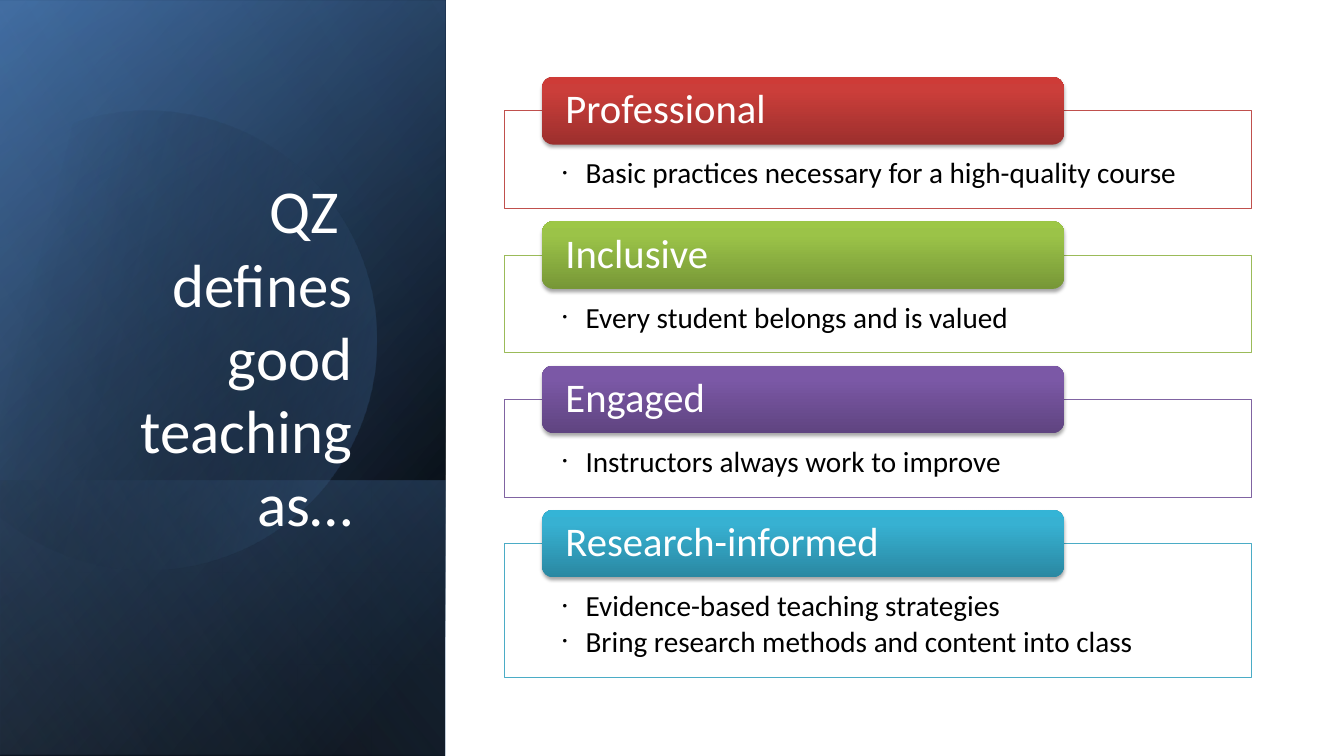
from dataclasses import dataclass
from math import cos, radians, sin

from pptx import Presentation, oxml, util as u
from pptx.dml.color import RGBColor
from pptx.enum import shapes as es, text as et
from pptx.oxml import ns

FONT = "Calibri"
BLACK = RGBColor(0x00, 0x00, 0x00)
WHITE = RGBColor(0xFF, 0xFF, 0xFF)
NAVY = RGBColor(0x37, 0x60, 0x92)
BLUE = RGBColor(0x4F, 0x81, 0xBD)
PALE = RGBColor(0x95, 0xB3, 0xD7)
RED = RGBColor(0xC0, 0x50, 0x4D)
GREEN = RGBColor(0x9B, 0xBB, 0x59)
PURPLE = RGBColor(0x80, 0x64, 0xA2)
TEAL = RGBColor(0x4B, 0xAC, 0xC6)
RED_FADE = (RGBColor(0x9C, 0x2F, 0x2D), RGBColor(0xCB, 0x3E, 0x3A), RGBColor(0xCE, 0x3B, 0x37))
GREEN_FADE = (RGBColor(0x77, 0x97, 0x37), RGBColor(0x9B, 0xC3, 0x48), RGBColor(0x9D, 0xC7, 0x46))
PURPLE_FADE = (RGBColor(0x5F, 0x44, 0x80), RGBColor(0x7B, 0x58, 0xA6), RGBColor(0x7C, 0x57, 0xA8))
TEAL_FADE = (RGBColor(0x2A, 0x88, 0xA2), RGBColor(0x37, 0xB1, 0xD2), RGBColor(0x34, 0xB4, 0xD6))
PITCH_GAP = 1.29


@dataclass
class Stop:
    pos: int
    color: RGBColor
    alpha: int = 100


@dataclass
class Panel:
    left: float
    top: float
    width: float
    angle: int
    stops: list[Stop]


@dataclass
class Card:
    head: str
    points: list[str]
    line: RGBColor
    fade: tuple[RGBColor, RGBColor, RGBColor]
    height: float = 2.72


PANELS = [
    Panel(-4.32, 4.32, 21.01, 50, [Stop(8, BLACK), Stop(100, NAVY)]),
    Panel(-4.32, 4.34, 21.01, 30, [Stop(0, BLACK, 0), Stop(99, BLUE, 46)]),
    Panel(2.36, 11, 7.67, 130, [Stop(2, BLUE, 29), Stop(100, BLACK, 30)]),
]
SHEEN = Panel(-4.32, 4.29, 21.01, 120, [Stop(0, BLACK, 0), Stop(99, PALE, 11)])
CARDS = [
    Card("Professional", ["Basic practices necessary for a high-quality course"], RED, RED_FADE),
    Card("Inclusive", ["Every student belongs and is valued"], GREEN, GREEN_FADE),
    Card("Engaged", ["Instructors always work to improve"], PURPLE, PURPLE_FADE),
    Card("Research-informed",
         ["Evidence-based teaching strategies", "Bring research methods and content into class"],
         TEAL, TEAL_FADE, 3.73),
]


def make(tag: str, inner: str = "", **attrs):
    pairs = "".join(f' {key}="{val}"' for key, val in attrs.items())
    return oxml.parse_xml(f'<a:{tag} {ns.nsdecls("a")}{pairs}>{inner}</a:{tag}>')


def tint(color: RGBColor, alpha: int) -> str:
    return f'<a:srgbClr val="{color}"><a:alpha val="{alpha * 1000}"/></a:srgbClr>'


def fade(shape, stops: list[Stop], angle: int) -> None:
    shape.shadow.inherit = False
    shape.line.fill.background()
    shape.fill.background()
    marks = "".join(f'<a:gs pos="{s.pos * 1000}">{tint(s.color, s.alpha)}</a:gs>' for s in stops)
    inner = f'<a:gsLst>{marks}</a:gsLst><a:lin ang="{angle * 60000}" scaled="0"/>'
    props = shape.element.spPr
    props.replace(props.find(ns.qn("a:noFill")), make("gradFill", inner, rotWithShape=1))


def add_box(slide, kind, left: float, top: float, width: float, height: float):
    return slide.shapes.add_shape(kind, u.Cm(left), u.Cm(top), u.Cm(width), u.Cm(height))


def write(shape, lines: list[str], *, size: int, color: RGBColor, insets: tuple,
          align=et.PP_ALIGN.LEFT, anchor=et.MSO_ANCHOR.TOP, spacing: float = 1.0,
          after: float = 0, bullet: bool = False) -> None:
    frame = shape.text_frame
    frame.word_wrap = True
    frame.auto_size = et.MSO_AUTO_SIZE.NONE
    frame.vertical_anchor = anchor
    (frame.margin_left, frame.margin_top,
     frame.margin_right, frame.margin_bottom) = (u.Cm(gap) for gap in insets)
    frame.text = "\n".join(lines)
    for para in frame.paragraphs:
        para.alignment = align
        para.line_spacing = spacing
        para.space_before = u.Pt(0)
        para.space_after = u.Pt(after)
        for run in para.runs:
            run.font.name = FONT
            run.font.size = u.Pt(size)
            run.font.color.rgb = color
        if bullet:
            para.level = 1
            props = para._p.get_or_add_pPr()
            props.set("marL", str(u.Cm(0.64)))
            props.set("indent", str(u.Cm(-0.64)))
            props.append(make("buClr", f'<a:srgbClr val="{color}"/>'))
            props.append(make("buSzPct", val=45000))
            props.append(make("buFont", typeface="Arial"))
            props.append(make("buChar", char="•"))


def draw_panel(slide, panel: Panel) -> None:
    shape = add_box(slide, es.MSO_SHAPE.RECTANGLE, panel.left, panel.top, panel.width, 12.37)
    shape.rotation = 90
    shape.element.spPr.xfrm.set("flipH", "1")
    fade(shape, panel.stops, panel.angle)


def draw_disc(slide) -> None:
    radius, turn = 6.38, 16.1
    arc = [radians(turn + deg) for deg in range(-135, 136, 3)]
    dots = [(u.Cm(radius * cos(a)), u.Cm(radius * sin(a))) for a in arc]
    path = slide.shapes.build_freeform(*dots[0])
    path.add_line_segments(dots[1:], close=True)
    disc = path.convert_to_shape()
    disc.left, disc.top = u.Cm(-1.52), u.Cm(2.97)
    disc.rotation = -turn
    fade(disc, [Stop(29, BLACK, 0), Stop(100, BLUE, 43)], 30)


def draw_card(slide, card: Card, top: float) -> None:
    body = add_box(slide, es.MSO_SHAPE.RECTANGLE, 14.03, top, 20.73, card.height)
    body.shadow.inherit = False
    body.fill.solid()
    body.fill.fore_color.rgb = WHITE
    body.line.color.rgb = card.line
    body.line.width = u.Pt(0.75)
    write(body, card.points, size=23, color=BLACK, insets=(1.6, 1.33, 1.6, 0.46),
          spacing=0.9, after=3.45, bullet=True)

    tab = add_box(slide, es.MSO_SHAPE.ROUNDED_RECTANGLE, 15.06, top - 0.94, 14.5, 1.88)
    fade(tab, [Stop(pos, color) for pos, color in zip((0, 80, 100), card.fade)], 270)
    glow = make("outerShdw", tint(BLACK, 35), blurRad=u.Pt(3.1), dist=u.Pt(1.8),
                dir=5400000, rotWithShape=0)
    tab.element.spPr.find(ns.qn("a:effectLst")).append(glow)
    write(tab, [card.head], size=32, color=WHITE, insets=(0.56, 0, 0.56, 0),
          anchor=et.MSO_ANCHOR.MIDDLE, spacing=0.9)


def main() -> None:
    deck = Presentation()
    deck.slide_width, deck.slide_height = u.Cm(37.34), u.Cm(21.01)
    slide = deck.slides.add_slide(deck.slide_layouts[5])
    for panel in PANELS:
        draw_panel(slide, panel)
    draw_disc(slide)
    draw_panel(slide, SHEEN)
    top = 3.08
    for card in CARDS:
        draw_card(slide, card, top)
        top += card.height + PITCH_GAP

    title = slide.shapes.title
    title.left, title.top = u.Cm(1.74), u.Cm(3.64)
    title.width, title.height = u.Cm(8.33), u.Cm(11.48)
    write(title, ["QZ \vdefines good teaching as…"], size=48, color=WHITE,
          insets=(0.28, 0.15, 0.28, 0.15), align=et.PP_ALIGN.RIGHT, anchor=et.MSO_ANCHOR.BOTTOM)
    title.element.getparent().append(title.element)
    deck.save("out.pptx")


if __name__ == "__main__":
    main()
